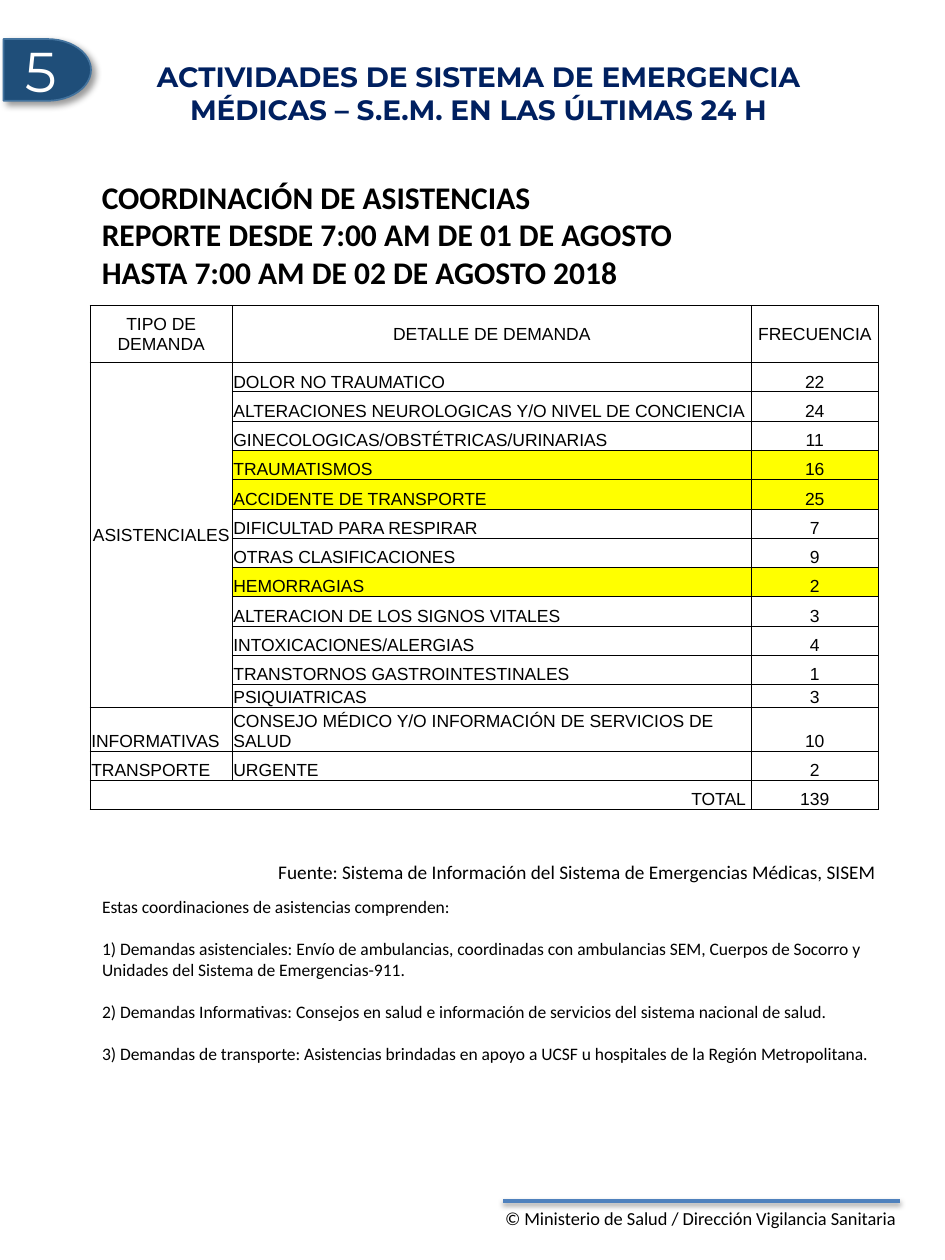
from lxml import etree
from pptx import Presentation
from pptx.dml.color import RGBColor
from pptx.enum import shapes, text
from pptx.oxml import ns
from pptx.util import Pt

COLORS = {"black": "000000", "white": "FFFFFF", "navy": "002060", "badge": "1F4E79",
          "edge": "43739E", "rule": "4F81BD", "highlight": "FFFF00"}
LEFT, CENTER, RIGHT = text.PP_ALIGN.LEFT, text.PP_ALIGN.CENTER, text.PP_ALIGN.RIGHT
MIDDLE, BOTTOM = text.MSO_ANCHOR.MIDDLE, text.MSO_ANCHOR.BOTTOM

HEADERS = ["TIPO DE DEMANDA", "DETALLE DE DEMANDA", "FRECUENCIA"]
CARE = [("DOLOR NO TRAUMATICO", 22),
        ("ALTERACIONES NEUROLOGICAS Y/O NIVEL DE CONCIENCIA", 24),
        ("GINECOLOGICAS/OBSTÉTRICAS/URINARIAS", 11),
        ("TRAUMATISMOS", 16),
        ("ACCIDENTE DE TRANSPORTE", 25),
        ("DIFICULTAD PARA RESPIRAR", 7),
        ("OTRAS CLASIFICACIONES", 9),
        ("HEMORRAGIAS", 2),
        ("ALTERACION DE LOS SIGNOS VITALES", 3),
        ("INTOXICACIONES/ALERGIAS", 4),
        ("TRANSTORNOS GASTROINTESTINALES", 1),
        ("PSIQUIATRICAS", 3)]
OTHER = [("INFORMATIVAS", "CONSEJO MÉDICO Y/O INFORMACIÓN DE SERVICIOS DE SALUD", 10),
         ("TRANSPORTE", "URGENTE", 2)]
HIGHLIGHTED = {"TRAUMATISMOS", "ACCIDENTE DE TRANSPORTE", "HEMORRAGIAS"}
REPORT = ["COORDINACIÓN DE ASISTENCIAS",
          "REPORTE DESDE 7:00 AM DE 01 DE AGOSTO",
          "HASTA 7:00 AM DE 02 DE AGOSTO 2018"]
NOTES = ["Estas coordinaciones de asistencias comprenden:",
         "1) Demandas asistenciales: Envío de ambulancias, coordinadas con ambulancias SEM, "
         "Cuerpos de Socorro y Unidades del Sistema de Emergencias-911.",
         "2) Demandas Informativas: Consejos en salud e información de servicios del "
         "sistema nacional de salud.",
         "3) Demandas de transporte: Asistencias brindadas en apoyo a UCSF u hospitales "
         "de la Región Metropolitana."]


def rgb(name):
    return RGBColor.from_string(COLORS[name])


def place(sp, box):
    sp.left, sp.top, sp.width, sp.height = (Pt(v) for v in box)


def write(tf, lines, size, font="Calibri", color="black", bold=False, align=LEFT):
    tf.text = "\n".join(lines)
    for p in tf.paragraphs:
        p.alignment = align
        for r in p.runs:
            r.font.size, r.font.name, r.font.bold = Pt(size), font, bold
            r.font.color.rgb = rgb(color)


def add_shadow(sp, alpha, blur, dist, angle):
    effects = etree.SubElement(sp._element.spPr, ns.qn("a:effectLst"))
    shadow = etree.SubElement(effects, ns.qn("a:outerShdw"), blurRad=str(Pt(blur)),
                              dist=str(Pt(dist)), dir=str(angle * 60000),
                              algn="tl", rotWithShape="0")
    clr = etree.SubElement(shadow, ns.qn("a:srgbClr"), val=COLORS["black"])
    etree.SubElement(clr, ns.qn("a:alpha"), val=str(alpha * 1000))


def add_label(s, box, lines, size, bold=False):
    sp = s.shapes.add_textbox(*(Pt(v) for v in box))
    sp.text_frame.word_wrap = False
    write(sp.text_frame, lines, size, bold=bold)


def add_footer(s, box):
    x, y, w, h = box
    rule = s.shapes.add_connector(shapes.MSO_CONNECTOR.STRAIGHT,
                                  Pt(x + 6), Pt(y), Pt(x + w - 9), Pt(y))
    rule.line.color.rgb, rule.line.width = rgb("rule"), Pt(2)
    add_shadow(rule, 38, 3.1, 1.6, 90)
    add_label(s, box, ["© Ministerio de Salud / Dirección Vigilancia Sanitaria"], 10.5)


def add_badge(s, box, number):
    sp = s.shapes.add_shape(shapes.MSO_SHAPE.FLOWCHART_DELAY, *(Pt(v) for v in box))
    sp.fill.solid()
    sp.fill.fore_color.rgb = rgb("badge")
    sp.line.color.rgb, sp.line.width = rgb("edge"), Pt(1)
    add_shadow(sp, 40, 4, 3, 45)
    sp.text_frame.vertical_anchor = MIDDLE
    write(sp.text_frame, [number], 32, "Montserrat", "white", align=CENTER)


def add_title(s, box):
    sp = s.shapes.title
    place(sp, box)
    tf = sp.text_frame
    tf.auto_size, tf.vertical_anchor = text.MSO_AUTO_SIZE.NONE, MIDDLE
    write(tf, ["ACTIVIDADES DE SISTEMA DE EMERGENCIA MÉDICAS – S.E.M. EN LAS ÚLTIMAS 24 H"],
          16, "Montserrat", "navy", True, CENTER)


def add_notes(s, box):
    sp = s.placeholders[1]
    place(sp, box)
    tf = sp.text_frame
    tf.auto_size = text.MSO_AUTO_SIZE.NONE
    write(tf, NOTES, 10)
    for i, p in enumerate(tf.paragraphs):
        p.space_before = Pt(12 if i else 0)
        pPr = p._p.get_or_add_pPr()
        pPr.set("marL", "0")
        pPr.set("indent", "0")
        etree.SubElement(pPr, ns.qn("a:buNone"))


def format_cell(cell, value, align, anchor, marked):
    cell.margin_left = cell.margin_right = cell.margin_top = Pt(0.7)
    cell.margin_bottom = Pt(0)
    cell.vertical_anchor = anchor
    write(cell.text_frame, [str(value)], 10, "Arial", align=align)
    if marked:
        cell.fill.solid()
        cell.fill.fore_color.rgb = rgb("highlight")
    else:
        cell.fill.background()
    # Borders come before the fill in the cell properties
    tcPr = cell._tc.get_or_add_tcPr()
    for i, side in enumerate(("lnL", "lnR", "lnT", "lnB")):
        ln = etree.Element(ns.qn("a:" + side), w=str(Pt(0.5)))
        fill = etree.SubElement(ln, ns.qn("a:solidFill"))
        etree.SubElement(fill, ns.qn("a:srgbClr"), val=COLORS["black"])
        tcPr.insert(i, ln)


def add_demand_table(s, box):
    rows = [HEADERS]
    rows += [("" if i else "ASISTENCIALES", *item) for i, item in enumerate(CARE)]
    rows += OTHER + [("TOTAL ", "", 139)]
    last = len(rows) - 1
    tbl = s.shapes.add_table(len(rows), 3, *(Pt(v) for v in box)).table
    tbl.first_row = tbl.horz_banding = False
    for col, width in zip(tbl.columns, (81.2, 296.6, 72.6)):
        col.width = Pt(width)
    for i, values in enumerate(rows):
        tbl.rows[i].height = Pt({0: 32.6, len(CARE): 13.2}.get(i, 16.75))
        for j, value in enumerate(values):
            centred = i == 0 or j == 2 or value == "ASISTENCIALES"
            align = CENTER if centred else RIGHT if i == last else LEFT
            anchor = MIDDLE if i == 0 or value == "ASISTENCIALES" else BOTTOM
            format_cell(tbl.cell(i, j), value, align, anchor,
                        j > 0 and values[1] in HIGHLIGHTED)
    tbl.cell(1, 0).merge(tbl.cell(len(CARE), 0))
    tbl.cell(last, 0).merge(tbl.cell(last, 1))


def main():
    prs = Presentation()
    prs.slide_width, prs.slide_height = Pt(540), Pt(720)
    s = prs.slides.add_slide(prs.slide_layouts[1])
    # Footer and heading
    add_footer(s, (281.5, 686.2, 242, 32.4))
    add_badge(s, (2, 22.3, 50, 35.3), "5")
    add_title(s, (55.4, 34.6, 436.3, 36.7))
    # Report period, table and source
    add_label(s, (51.1, 98, 348.5, 94.3), REPORT, 18, bold=True)
    add_demand_table(s, (51.5, 174.6, 450.4, 288))
    add_label(s, (151.9, 488.2, 358.6, 20.9),
              ["Fuente: Sistema de Información del Sistema de Emergencias Médicas, SISEM"], 11)
    # Explanation of the demand types
    add_notes(s, (51.1, 508.3, 463.7, 104.4))
    prs.save("out.pptx")


if __name__ == "__main__":
    main()
